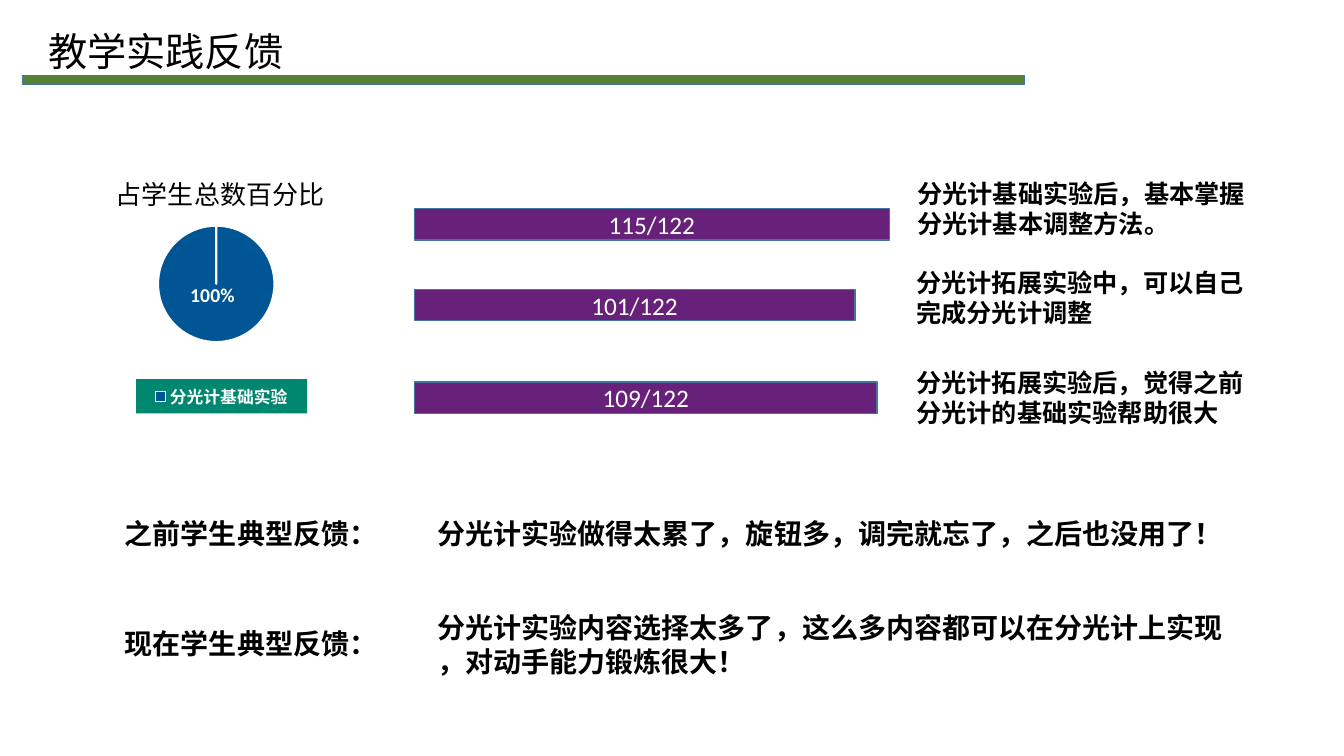
from lxml.etree import SubElement
from pptx import Presentation
from pptx.chart.data import CategoryChartData
from pptx.dml.color import RGBColor
from pptx.enum.chart import XL_CHART_TYPE as ChartType, XL_LABEL_POSITION as LabelPosition
from pptx.enum.chart import XL_LEGEND_POSITION as LegendPosition
from pptx.enum.shapes import MSO_SHAPE as Shape
from pptx.enum.text import MSO_ANCHOR as Anchor, MSO_AUTO_SIZE as AutoSize, PP_ALIGN as Align
from pptx.oxml import parse_xml
from pptx.oxml.ns import nsdecls, qn
from pptx.util import Pt

EMU_PER_PX = 9144
FONT = "Calibri"
BLACK, WHITE = "000000", "FFFFFF"
GREEN, PURPLE, BLUE, TEAL, OUTLINE = "548235", "68217A", "005695", "008770", "43739E"

SURVEY = [
    (207, 471, "115/122", 900, 172, "分光计基础实验后，基本掌握分光计基本调整方法。"),
    (287, 437, "101/122", 899, 260, "分光计拓展实验中，可以自己\n完成分光计调整"),
    (379, 459, "109/122", 899, 359, "分光计拓展实验后，觉得之前分光计的基础实验帮助很大"),
]
FEEDBACK = [
    ("之前学生典型反馈：", 507, 44, "分光计实验做得太累了，旋钮多，调完就忘了，之后也没用了！"),
    ("现在学生典型反馈：", 601, 77,
     "分光计实验内容选择太多了，这么多内容都可以在分光计上实现\n，对动手能力锻炼很大！"),
]


def px(*lengths):
    """Turn pixel lengths into EMU."""
    return [round(length * EMU_PER_PX) for length in lengths]


def color(value):
    """Make a colour from a hex string."""
    return RGBColor.from_string(value)


def style_font(font, size, fill=BLACK, bold=False):
    """Set the face, size, colour and weight of a font."""
    font.name, font.size, font.bold = FONT, Pt(size), bold
    font.color.rgb = color(fill)


def write(frame, text, size, fill=BLACK, bold=False, align=Align.LEFT, anchor=Anchor.TOP, wrap=True):
    """Fill a text frame with formatted text, one paragraph a line."""
    frame.text = text
    frame.word_wrap, frame.vertical_anchor = wrap, anchor
    frame.auto_size = AutoSize.NONE
    for paragraph in frame.paragraphs:
        paragraph.alignment = align
        for run in paragraph.runs:
            style_font(run.font, size, fill, bold)


def add_text(slide, box, text, **style):
    """Add a text box."""
    write(slide.shapes.add_textbox(*px(*box)).text_frame, text, **style)


def add_bar(slide, box, fill):
    """Add a filled rectangle with a thin outline."""
    bar = slide.shapes.add_shape(Shape.RECTANGLE, *px(*box))
    bar.shadow.inherit = False
    bar.fill.solid()
    bar.fill.fore_color.rgb = color(fill)
    bar.line.color.rgb = color(OUTLINE)
    bar.line.width = Pt(1)
    return bar


def add_header(slide, left, top):
    """Place the slide title above its green rule."""
    title = slide.shapes.title
    title.left, title.top, title.width, title.height = px(left + 15, top, 256, 57)
    write(title.text_frame, "教学实践反馈", size=28, wrap=False)
    add_bar(slide, (left, top + 53, 993, 9), GREEN)


def set_layout(element, index, **values):
    """Give a chart part a manual layout at the given child index."""
    for old in element.findall(qn("c:layout")):
        element.remove(old)
    layout = parse_xml(f"<c:layout {nsdecls('c')}/>")
    manual = SubElement(layout, qn("c:manualLayout"))
    for name, value in values.items():
        SubElement(manual, qn(f"c:{name}")).set("val", str(value))
    element.insert(index, layout)


def add_pie(slide, box):
    """Place the pie chart with its title, label and legend."""
    data = CategoryChartData()
    data.categories = ["分光计基础实验"]
    data.add_series("占学生总数百分比", [100])
    chart = slide.shapes.add_chart(ChartType.PIE, *px(*box), data).chart
    style_font(chart.font, 10)
    write_title = chart.chart_title.text_frame
    write_title.text = "占学生总数百分比"
    style_font(write_title.paragraphs[0].runs[0].font, 18.6)
    edges = {"xMode": "edge", "yMode": "edge"}
    set_layout(chart.chart_title._element, 1, **edges, x=0.21, y=0.07)

    plot = chart.plots[0]
    plot.vary_by_categories = True
    point = plot.series[0].points[0]
    point.format.fill.solid()
    point.format.fill.fore_color.rgb = color(BLUE)
    point.format.line.color.rgb = color(WHITE)
    point.format.line.width = Pt(1.5)
    label = point.data_label
    label.text_frame.text = "100%"
    style_font(label.text_frame.paragraphs[0].runs[0].font, 14, WHITE, True)
    label.position = LabelPosition.CENTER
    set_layout(label._dLbl, 1, x=-0.01, y=-0.06)
    set_layout(plot._element.getparent(), 0, layoutTarget="inner", **edges, x=0.34, y=0.28, w=0.32, h=0.41)

    chart.has_legend = True
    legend = chart.legend
    legend.position, legend.include_in_layout = LegendPosition.BOTTOM, False
    style_font(legend.font, 12, WHITE, True)
    set_layout(legend._element, 1, **edges, x=0.28, y=0.82, w=0.47, h=0.12)
    fill = parse_xml(f'<c:spPr {nsdecls("c", "a")}><a:solidFill><a:srgbClr val="{TEAL}"/></a:solidFill></c:spPr>')
    legend._element.find(qn("c:txPr")).addprevious(fill)


def add_survey(slide, left):
    """Place the survey bars with their statements on the right."""
    for top, width, count, text_left, text_top, statement in SURVEY:
        bar = add_bar(slide, (left, top, width, 31), PURPLE)
        write(bar.text_frame, count, size=18, fill=WHITE, align=Align.CENTER, anchor=Anchor.MIDDLE)
        add_text(slide, (text_left, text_top, 356, 71), statement, size=18, bold=True)


def add_feedback(slide, left, top, gap):
    """Place the feedback labels beside the quoted remarks."""
    for row, (label, quote_top, height, quote) in enumerate(FEEDBACK):
        add_text(slide, (left, top + row * gap, 273, 44), label, size=20, bold=True, wrap=False)
        add_text(slide, (left + 310, quote_top, 810, height), quote, size=20, bold=True, wrap=False)


def main():
    """Build and save the slide."""
    presentation = Presentation()
    presentation.slide_width, presentation.slide_height = px(1333, 750)
    slide = presentation.slides.add_slide(presentation.slide_layouts[5])
    add_header(slide, 23, 22)
    add_pie(slide, (34, 145, 361, 282))
    add_survey(slide, 411)
    add_feedback(slide, 114, 507, 110)
    presentation.save("out.pptx")


if __name__ == "__main__":
    main()
